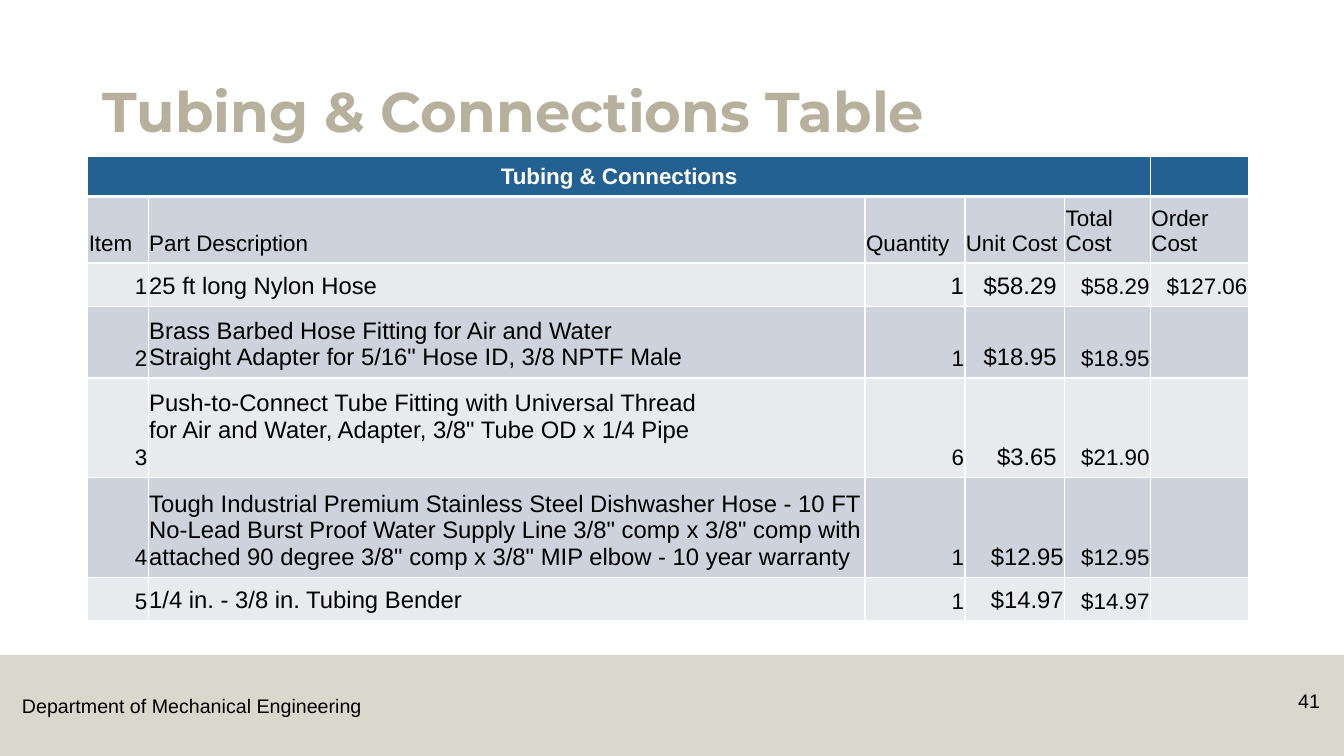
from dataclasses import dataclass

from lxml.etree import SubElement
from pptx import Presentation
from pptx.dml.color import RGBColor
from pptx.enum.shapes import MSO_SHAPE
from pptx.enum.text import MSO_ANCHOR, MSO_AUTO_SIZE, PP_ALIGN
from pptx.oxml.ns import qn
from pptx.util import Inches, Length, Pt

SAND, BLACK, WHITE = "B7B09C", "000000", "FFFFFF"
HEADER_BLUE, DARK_BAND, LIGHT_BAND = "236192", "CDD2DC", "E8EAEE"
SLIDE_WIDTH, SLIDE_HEIGHT = Inches(13.33), Inches(7.5)

# Table columns as percentages of the slide width, rows of its height
COLUMN_SHARES = [4.5, 53.34, 7.43, 7.43, 6.38, 7.28]
ROW_SHARES = [5.33, 8.8, 5.73, 9.47, 13.2, 13.2, 5.73]
HEADINGS = ["Item", "Part Description", "Quantity", "Unit Cost", "Total Cost", "Order Cost"]


@dataclass
class Area:
    """A place on the slide, in percent of its width and height."""
    left: float
    top: float
    width: float
    height: float


@dataclass
class Part:
    description: str
    quantity: str
    unit_cost: str
    total_cost: str
    order_cost: str = ""
    quantity_size: int = 16
    unit_inset: float = 0.01
    description_inset: float = 0.07


PARTS = [
    Part("25 ft long Nylon Hose", "1", "$58.29", "$58.29", "$127.06",
         quantity_size=17, unit_inset=0.08),
    Part("Brass Barbed Hose Fitting for Air and Water\n"
         "Straight Adapter for 5/16\" Hose ID, 3/8 NPTF Male",
         "1", "$18.95", "$18.95", unit_inset=0.08),
    Part("Push-to-Connect Tube Fitting with Universal Thread\n"
         "for Air and Water, Adapter, 3/8\" Tube OD x 1/4 Pipe",
         "6", "$3.65", "$21.90", unit_inset=0.08, description_inset=0.34),
    Part("Tough Industrial Premium Stainless Steel Dishwasher Hose - 10 FT "
         "No-Lead Burst Proof Water Supply Line 3/8\" comp x 3/8\" comp with "
         "attached 90 degree 3/8\" comp x 3/8\" MIP elbow - 10 year warranty",
         "1", "$12.95", "$12.95"),
    Part("1/4 in. - 3/8 in. Tubing Bender", "1", "$14.97", "$14.97"),
]


def across(share: float) -> Length:
    return Length(round(SLIDE_WIDTH * share / 100))


def down(share: float) -> Length:
    return Length(round(SLIDE_HEIGHT * share / 100))


def place(area: Area) -> tuple[Length, Length, Length, Length]:
    return across(area.left), down(area.top), across(area.width), down(area.height)


def color(value: str) -> RGBColor:
    return RGBColor.from_string(value)


def write(para, text: str, size: int, ink: str = BLACK, bold: bool = False,
          font: str = "Arial", align=PP_ALIGN.LEFT) -> None:
    para.alignment = align
    for index, line in enumerate(text.split("\n")):
        if index:
            para.add_line_break()
        span = para.add_run()
        span.text = line
        span.font.name, span.font.size, span.font.bold = font, Pt(size), bold
        span.font.color.rgb = color(ink)


def format_cell(cell, fill: str, top: int = 1, bottom: int = 1) -> None:
    properties = cell._tc.get_or_add_tcPr()
    for side, points in (("L", 1), ("R", 1), ("T", top), ("B", bottom)):
        line = SubElement(properties, qn(f"a:ln{side}"), w=str(Pt(points)))
        SubElement(SubElement(line, qn("a:solidFill")), qn("a:srgbClr"), val=WHITE)
    cell.fill.solid()
    cell.fill.fore_color.rgb = color(fill)
    cell.vertical_anchor = MSO_ANCHOR.BOTTOM
    cell.margin_left = cell.margin_right = cell.margin_top = Inches(0.01)
    cell.margin_bottom = Inches(0.07)


def add_footer_band(page, area: Area) -> None:
    band = page.shapes.add_shape(MSO_SHAPE.RECTANGLE, *place(area))
    band.shadow.inherit = False
    band.line.fill.background()
    band.fill.solid()
    band.fill.fore_color.rgb = color(SAND)
    tint = band._element.spPr.find(f".//{qn('a:srgbClr')}")
    SubElement(tint, qn("a:alpha"), val="50000")


def add_label(page, area: Area, text: str, align=PP_ALIGN.LEFT, wrap: bool = True) -> None:
    box = page.shapes.add_textbox(*place(area))
    box.text_frame.word_wrap = wrap
    if not wrap:
        box.text_frame.auto_size = MSO_AUTO_SIZE.SHAPE_TO_FIT_TEXT
    write(box.text_frame.paragraphs[0], text, 14, align=align)


def format_title(title, area: Area, text: str) -> None:
    title.left, title.top, title.width, title.height = place(area)
    title.text_frame.vertical_anchor = MSO_ANCHOR.BOTTOM
    para = title.text_frame.paragraphs[0]
    para.line_spacing = 0.9
    write(para, text, 40, SAND, True, "Montserrat")


def add_parts_table(page, area: Area) -> None:
    table = page.shapes.add_table(len(ROW_SHARES), len(COLUMN_SHARES), *place(area)).table
    for column, share in zip(table.columns, COLUMN_SHARES):
        column.width = across(share)
    for row, share in zip(table.rows, ROW_SHARES):
        row.height = down(share)

    # Header row, then alternating bands
    for number, row in enumerate(table.rows):
        fill = HEADER_BLUE if number == 0 else DARK_BAND if number % 2 else LIGHT_BAND
        for cell in row.cells:
            format_cell(cell, fill, 3 if number == 1 else 1, 3 if number == 0 else 1)
    table.cell(0, 0).merge(table.cell(0, 4))
    write(table.cell(0, 0).text_frame.paragraphs[0], "Tubing & Connections", 16,
          WHITE, True, align=PP_ALIGN.CENTER)
    for column, heading in enumerate(HEADINGS):
        write(table.cell(1, column).text_frame.paragraphs[0], heading, 16)

    # One row for each part
    for item, part in enumerate(PARTS, 1):
        values = [(str(item), 16), (part.description, 17),
                  (part.quantity, part.quantity_size), (part.unit_cost, 17),
                  (part.total_cost, 16), (part.order_cost, 16)]
        for column, (text, size) in enumerate(values):
            if text:
                align = PP_ALIGN.LEFT if column == 1 else PP_ALIGN.RIGHT
                write(table.cell(item + 1, column).text_frame.paragraphs[0],
                      text, size, align=align)
        table.cell(item + 1, 1).margin_bottom = Inches(part.description_inset)
        table.cell(item + 1, 3).margin_right = Inches(part.unit_inset)


def main() -> None:
    deck = Presentation()
    deck.slide_width, deck.slide_height = SLIDE_WIDTH, SLIDE_HEIGHT
    page = deck.slides.add_slide(deck.slide_layouts[5])

    # Footer
    add_footer_band(page, Area(0, 86.67, 100, 13.33))
    add_label(page, Area(0.9, 91.07, 26.93, 4.53), "Department of Mechanical Engineering",
              wrap=False)
    add_label(page, Area(93.17, 90.53, 5.78, 5.33), "41", PP_ALIGN.RIGHT)

    # Title and table
    format_title(page.shapes.title, Area(6.9, 5.33, 86.27, 14.53), "Tubing & Connections Table")
    add_parts_table(page, Area(6.53, 20.67, sum(COLUMN_SHARES), sum(ROW_SHARES)))
    deck.save("out.pptx")


if __name__ == "__main__":
    main()
